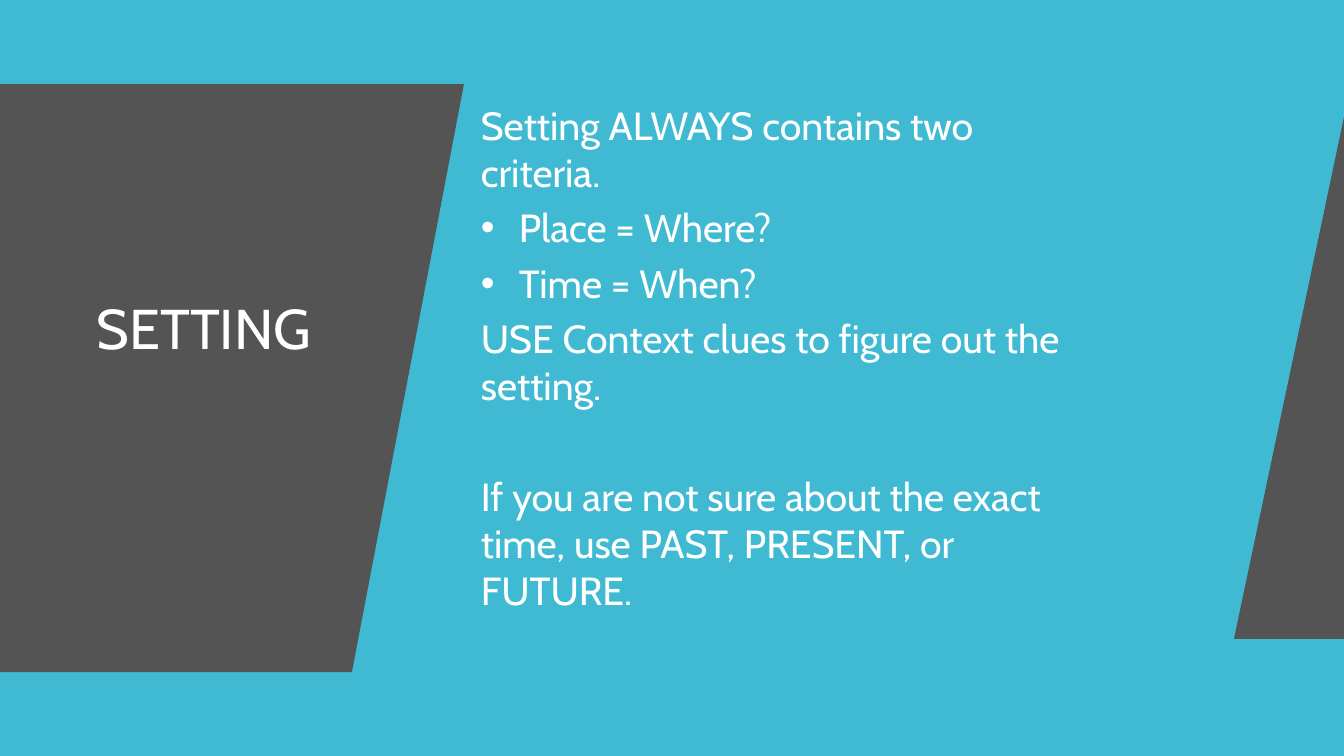
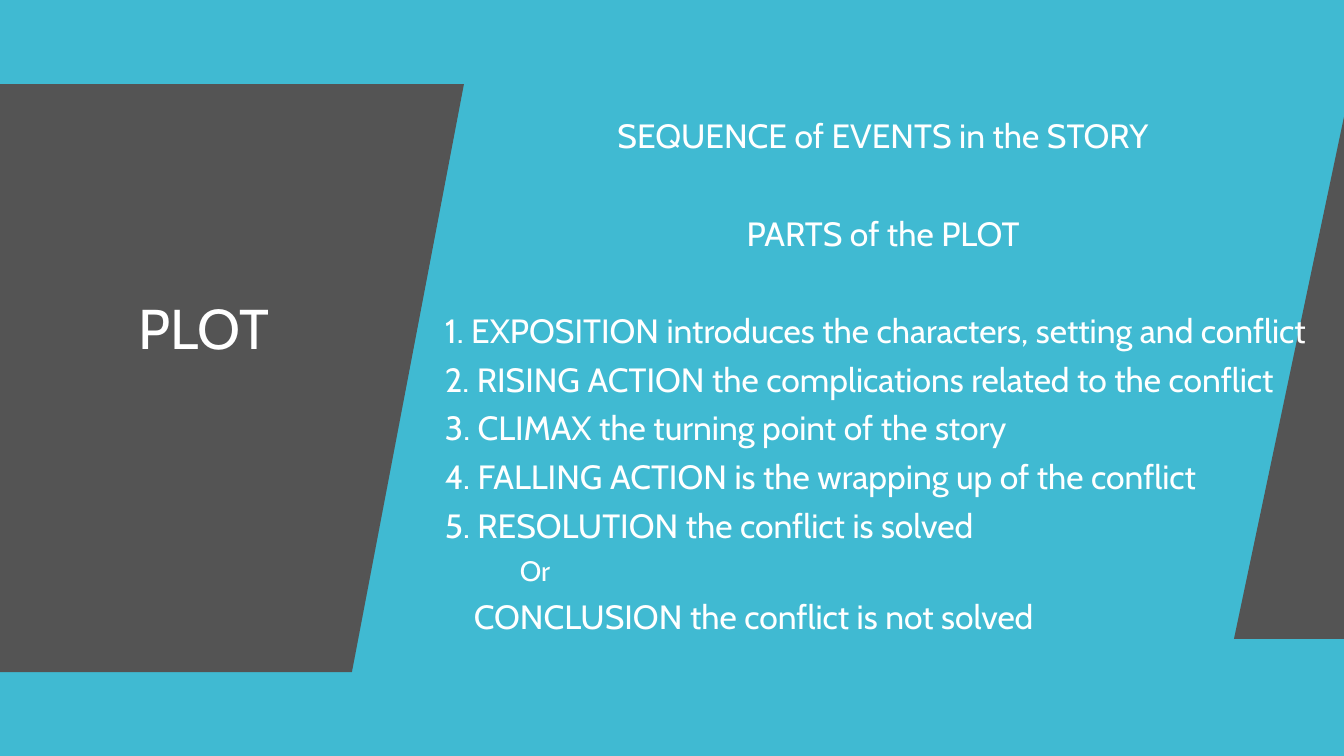
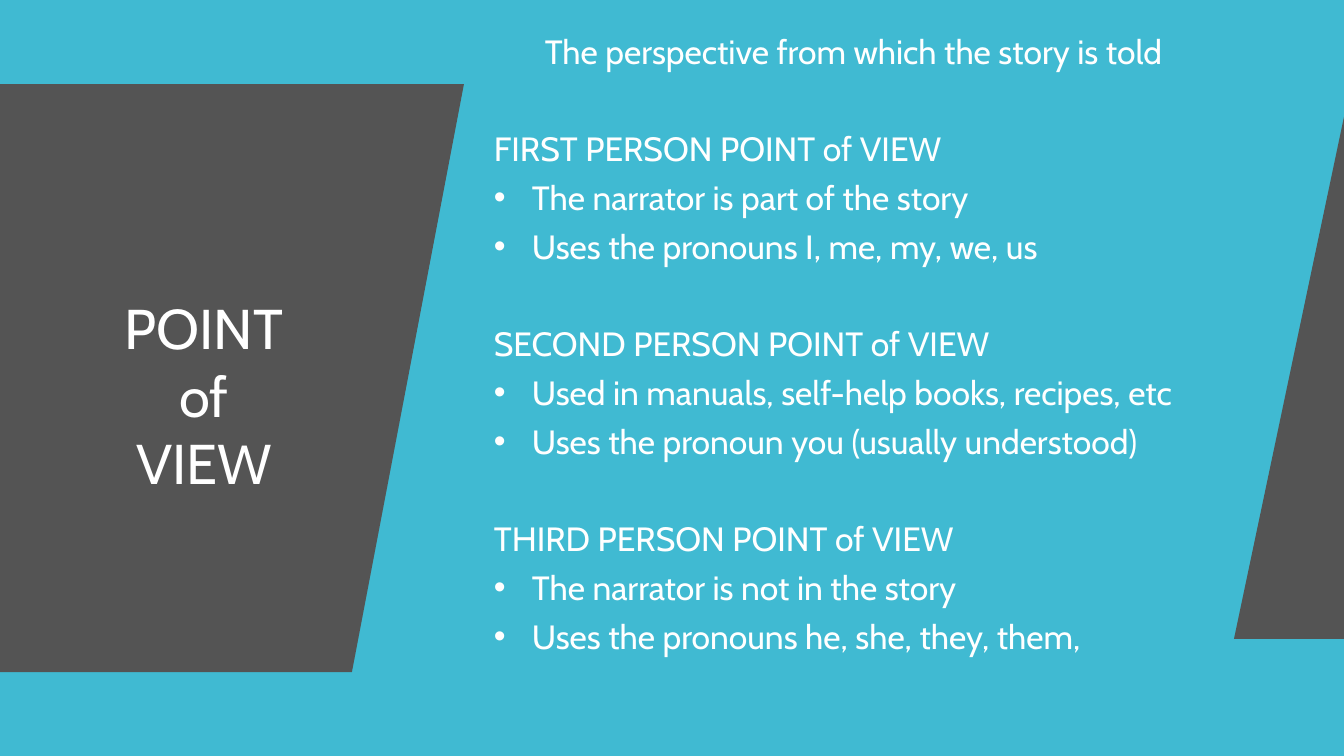
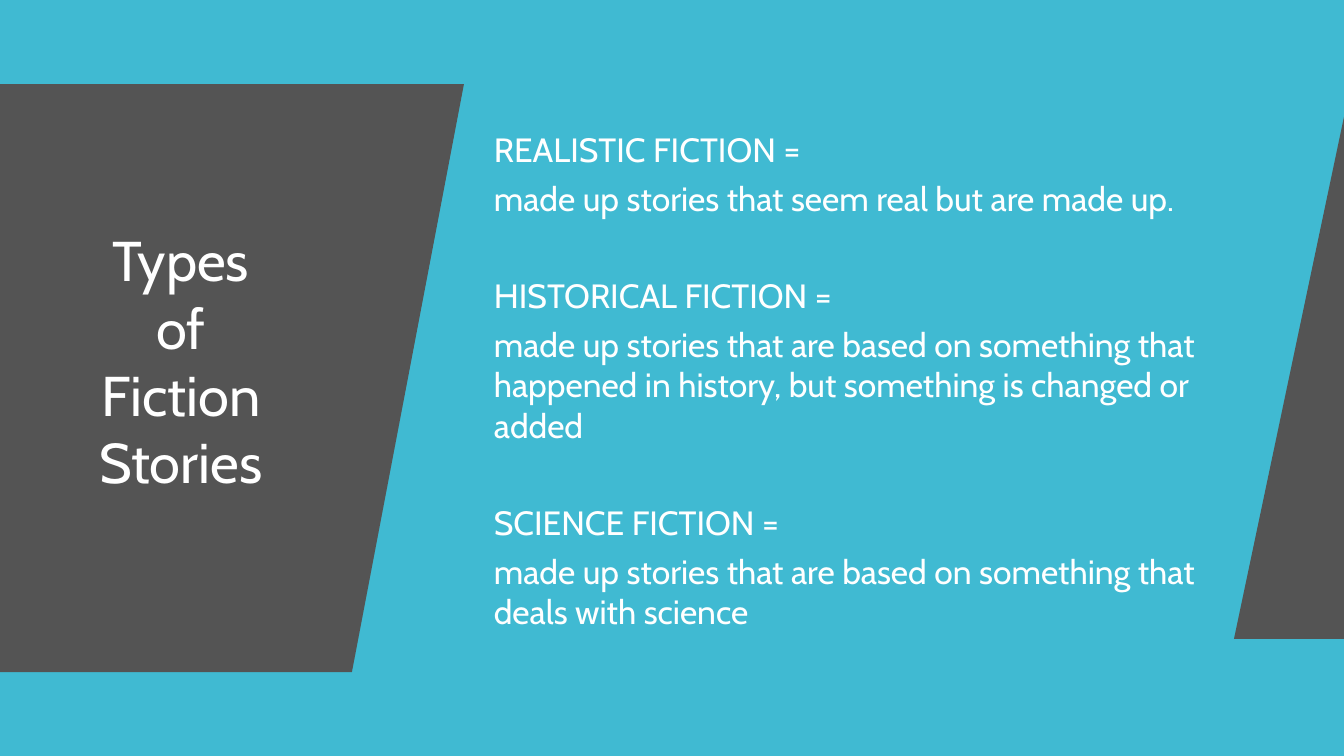
from lxml import etree
from pptx import Presentation
from pptx.dml.color import RGBColor
from pptx.enum.text import MSO_AUTO_SIZE, PP_ALIGN
from pptx.oxml.ns import qn
from pptx.util import Pt

SLIDE_W, SLIDE_H = 1344, 756
EMU_PER_PX = 12192000 / SLIDE_W

TEAL = RGBColor(0x40, 0xBA, 0xD2)
CHARCOAL = RGBColor(0x54, 0x54, 0x54)
WHITE = RGBColor(0xFF, 0xFF, 0xFF)
FONT = "Cabin"
CENTER, LEFT = PP_ALIGN.CENTER, PP_ALIGN.LEFT
FIT_SHAPE = MSO_AUTO_SIZE.SHAPE_TO_FIT_TEXT

TITLE_SIZE = 40
SPACE_AFTER = 6
LINE_HEIGHT = 1.2
HANGING = 38

PANELS = [
    [(0, 84), (464, 84), (352, 672), (0, 672)],
    [(1344, 117), (1344, 639), (1234, 639)],
]

# Body paragraphs are (text, options); options are "center", "bullet",
# "gap" (one line of space above), "indent" (px) and "size" (pt).
BULLET = {"bullet": True}
GAP = {"gap": True}
SLIDES = [
    {
        "title": ["SETTING"],
        "title_box": (53, 289, 302, 78),
        "body_box": (471, 96, 611, 530),
        "size": 28,
        "body": [
            ("Setting ALWAYS contains two criteria.", {}),
            ("Place = Where?", BULLET),
            ("Time = When?", BULLET),
            ("USE Context clues to figure out the setting.", {}),
            ("If you are not sure about the exact time, use PAST, PRESENT, or FUTURE.", GAP),
        ],
    },
    {
        "title": ["PLOT"],
        "title_box": (53, 289, 302, 78),
        "body_box": (435, 110, 896, 543),
        "size": 24,
        "body": [
            ("SEQUENCE of EVENTS in the STORY", {"center": True}),
            ("PARTS of the PLOT", {"center": True, "gap": True}),
            ("1. EXPOSITION introduces the characters, setting and conflict", GAP),
            ("2. RISING ACTION the complications related to the conflict", {}),
            ("3. CLIMAX the turning point of the story", {}),
            ("4. FALLING ACTION is the wrapping up of the conflict", {}),
            ("5. RESOLUTION the conflict is solved", {}),
            ("Or", {"indent": 75, "size": 20}),
            ("CONCLUSION the conflict is not solved", {"indent": 29}),
        ],
    },
    {
        "title": ["POINT", "of", "VIEW"],
        "title_box": (53, 289, 302, 214),
        "body_box": (484, 26, 739, 645),
        "size": 24,
        "body": [
            ("The perspective from which the story is told", {"center": True}),
            ("FIRST PERSON POINT of VIEW", GAP),
            ("The narrator is part of the story", BULLET),
            ("Uses the pronouns I, me, my, we, us", BULLET),
            ("SECOND PERSON POINT of VIEW", GAP),
            ("Used in manuals, self-help books, recipes, etc", BULLET),
            ("Uses the pronoun you (usually understood)", BULLET),
            ("THIRD PERSON POINT of VIEW", GAP),
            ("The narrator is not in the story", BULLET),
            ("Uses the pronouns he, she, they, them,", BULLET),
        ],
    },
    {
        "title": ["Types", "of", "Fiction Stories"],
        "title_box": (30, 221, 302, 282),
        "body_box": (484, 124, 739, 520),
        "size": 24,
        "body": [
            ("REALISTIC FICTION =", {}),
            ("made up stories that seem real but are made up.", {}),
            ("HISTORICAL FICTION =", GAP),
            ("made up stories that are based on something that happened in history, "
             "but something is changed or added", {}),
            ("SCIENCE FICTION =", GAP),
            ("made up stories that are based on something that deals with science", {}),
        ],
    },
]


def px(n):
    return round(n * EMU_PER_PX)


def add_text(s, box, paragraphs, size, space_after):
    tf = s.shapes.add_textbox(*map(px, box)).text_frame
    tf.word_wrap = True
    tf.auto_size = FIT_SHAPE
    for i, (text, opts) in enumerate(paragraphs):
        p = tf.paragraphs[0] if i == 0 else tf.add_paragraph()
        p.alignment = CENTER if opts.get("center") else LEFT
        p.space_after = Pt(space_after)
        if opts.get("gap"):
            p.space_before = Pt(size * LINE_HEIGHT + space_after)
        pPr = p._p.get_or_add_pPr()
        if opts.get("bullet"):
            pPr.set("marL", str(px(HANGING)))
            pPr.set("indent", str(-px(HANGING)))
            etree.SubElement(pPr, qn("a:buFont"), typeface="Arial")
            etree.SubElement(pPr, qn("a:buChar"), char="•")
        elif "indent" in opts:
            pPr.set("marL", str(px(opts["indent"])))
        r = p.add_run()
        r.text = text
        r.font.name = FONT
        r.font.size = Pt(opts.get("size", size))
        r.font.color.rgb = WHITE


prs = Presentation()
prs.slide_width, prs.slide_height = px(SLIDE_W), px(SLIDE_H)
blank = prs.slide_layouts[6]
master_fill = prs.slide_master.background.fill
master_fill.solid()
master_fill.fore_color.rgb = TEAL

for content in SLIDES:
    s = prs.slides.add_slide(blank)
    for start, *corners in PANELS:
        outline = s.shapes.build_freeform(*start, scale=EMU_PER_PX)
        outline.add_line_segments(corners, close=True)
        sp = outline.convert_to_shape()
        sp.shadow.inherit = False
        sp.fill.solid()
        sp.fill.fore_color.rgb = CHARCOAL
        sp.line.fill.background()
    add_text(s, content["body_box"], content["body"], content["size"], SPACE_AFTER)
    title = [(line, {"center": True}) for line in content["title"]]
    add_text(s, content["title_box"], title, TITLE_SIZE, 0)

prs.save("out.pptx")
